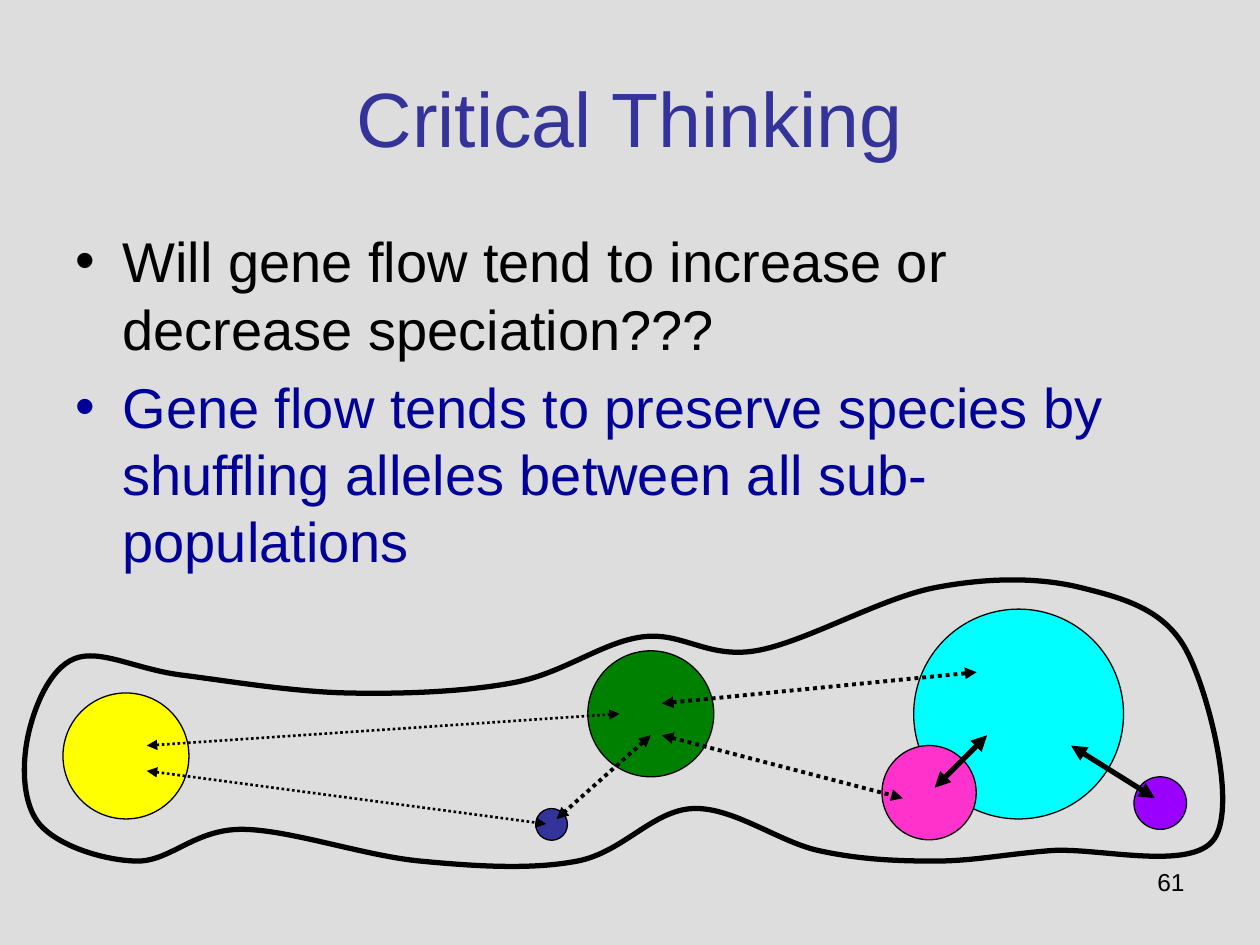
from lxml.etree import SubElement
from pptx import Presentation
from pptx.dml.color import RGBColor
from pptx.enum.dml import MSO_LINE_DASH_STYLE as Dash
from pptx.enum.shapes import MSO_CONNECTOR as Connector, MSO_SHAPE as Shape
from pptx.enum.text import MSO_ANCHOR as Anchor, PP_ALIGN as Align
from pptx.oxml.ns import qn
from pptx.util import Cm, Pt

BLACK = RGBColor(0x00, 0x00, 0x00)
GREY = RGBColor(0xDD, 0xDD, 0xDD)
INDIGO = RGBColor(0x33, 0x33, 0x99)
NAVY = RGBColor(0x00, 0x00, 0x99)
GREEN = RGBColor(0x00, 0x80, 0x00)
CYAN = RGBColor(0x00, 0xFF, 0xFF)
PURPLE = RGBColor(0x99, 0x00, 0xFF)
YELLOW = RGBColor(0xFF, 0xFF, 0x00)
PINK = RGBColor(0xFF, 0x33, 0xCC)


def add_text(page, place, lines, size, **paragraph_format):
    """Add a wrapped text box; lines holds (wording, colour) pairs."""
    frame = page.shapes.add_textbox(*map(Cm, place)).text_frame
    frame.word_wrap = True
    for index, (wording, color) in enumerate(lines):
        para = frame.paragraphs[0] if index == 0 else frame.add_paragraph()
        for name, value in paragraph_format.items():
            setattr(para, name, value)
        span = para.add_run()
        span.text = wording
        for name, value in {"name": "Arial", "size": Pt(size)}.items():
            setattr(span.font, name, value)
        span.font.color.rgb = color
    return frame


def add_path_step(path, tag, points, origin):
    """Append one drawing step, its points measured from the origin."""
    step = SubElement(path, qn(tag))
    for x, y in points:
        SubElement(step, qn("a:pt"), x=str(Cm(x - origin[0])), y=str(Cm(y - origin[1])))


deck = Presentation()
deck.slide_width, deck.slide_height = Cm(25.4), Cm(19.05)
page = deck.slides.add_slide(deck.slide_layouts[6])
page.background.fill.solid()
page.background.fill.fore_color.rgb = GREY

# Page number, title and bullets
add_text(page, (18.21, 17.35, 5.92, 1.32), [("61", BLACK)], 14, alignment=Align.RIGHT)
title = add_text(page, (1.27, 0.76, 22.86, 3.18), [("Critical Thinking", INDIGO)], 44,
                 alignment=Align.CENTER)
title.vertical_anchor = Anchor.MIDDLE
body = add_text(page, (1.27, 4.45, 22.86, 12.57), [
    ("Will gene flow tend to increase or decrease speciation???", BLACK),
    ("Gene flow tends to preserve species by shuffling alleles between all sub-populations",
     NAVY),
], 32, space_before=Pt(6.4))
for para in body.paragraphs:
    properties = para._p.get_or_add_pPr()
    for name, value in {"marL": Cm(0.95), "indent": -Cm(0.95)}.items():
        properties.set(name, str(value))
    SubElement(properties, qn("a:buFont"), typeface="Arial")
    SubElement(properties, qn("a:buChar"), char="•")

diagram = page.shapes.add_group_shape().shapes

# Sub-populations: left, top, diameter, colour
populations = [
    (10.8, 16.3, 0.64, INDIGO),
    (11.85, 13.12, 2.54, GREEN),
    (18.42, 12.28, 4.23, CYAN),
    (22.86, 15.66, 1.06, PURPLE),
    (1.27, 13.97, 2.54, YELLOW),
    (17.78, 15.03, 1.9, PINK),
]
for left, top, diameter, color in populations:
    circle = diagram.add_shape(Shape.OVAL, Cm(left), Cm(top), Cm(diameter), Cm(diameter))
    circle.shadow.inherit = False
    circle.fill.solid()
    circle.fill.fore_color.rgb = color
    circle.line.color.rgb = BLACK
    circle.line.width = Pt(0.75)

# Gene flow arrows: start, end, width, dash
flows = [
    (21.59, 15.03, 23.28, 16.09, 3, None),
    (13.34, 14.18, 19.69, 13.55, 2.25, Dash.ROUND_DOT),
    (2.96, 15.03, 12.49, 14.39, 1.5, Dash.ROUND_DOT),
    (2.96, 15.54, 11.01, 16.61, 1.5, Dash.ROUND_DOT),
    (19.9, 14.82, 18.84, 15.88, 3, None),
    (13.34, 14.82, 18.2, 16.09, 2.25, Dash.ROUND_DOT),
    (13.12, 14.82, 11.22, 16.51, 2.25, Dash.ROUND_DOT),
]
for *ends, width, dash in flows:
    arrow = diagram.add_connector(Connector.STRAIGHT, *map(Cm, ends))
    arrow.line.color.rgb = BLACK
    for name, value in {"width": Pt(width), "dash_style": dash}.items():
        setattr(arrow.line, name, value)
    outline = arrow.line._get_or_add_ln()
    for tag in ("a:headEnd", "a:tailEnd"):
        SubElement(outline, qn(tag), type="triangle")
    SubElement(arrow._element.spPr, qn("a:effectLst"))

# Species boundary: a frame whose path becomes a smooth closed curve
left, top, right, bottom = 0.43, 11.63, 24.92, 17.57
corners = [(right, top), (right, bottom), (left, bottom)]
builder = diagram.build_freeform(Cm(left), Cm(top))
builder.add_line_segments([(Cm(x), Cm(y)) for x, y in corners], close=True)
boundary = builder.convert_to_shape()
boundary.shadow.inherit = False
boundary.fill.background()
boundary.line.color.rgb = BLACK
boundary.line.width = Pt(3)

anchors = [
    (0.56, 14.86), (1.5, 13.28), (3.66, 13.61), (6.99, 13.97), (10.37, 13.76),
    (12.95, 12.84), (15.24, 13.12), (18.84, 11.85), (21.8, 11.85), (23.92, 13.12),
    (24.48, 16.91), (21.17, 17.15), (18.84, 17.36), (16.51, 17.15), (13.97, 16.3),
    (11.64, 17.36), (8.47, 17.36), (4.87, 16.72), (2.75, 17.36), (0.81, 16.63),
]
curve = next(boundary._element.iter(qn("a:path")))
for step in list(curve):
    curve.remove(step)
add_path_step(curve, "a:moveTo", anchors[:1], (left, top))
for index in range(len(anchors)):
    before, start, end, after = (anchors[(index + shift) % len(anchors)]
                                 for shift in (-1, 0, 1, 2))
    leaving = [s + (e - b) / 6 for b, s, e in zip(before, start, end)]
    arriving = [e - (a - s) / 6 for s, e, a in zip(start, end, after)]
    add_path_step(curve, "a:cubicBezTo", [leaving, arriving, end], (left, top))
SubElement(curve, qn("a:close"))

deck.save("out.pptx")
